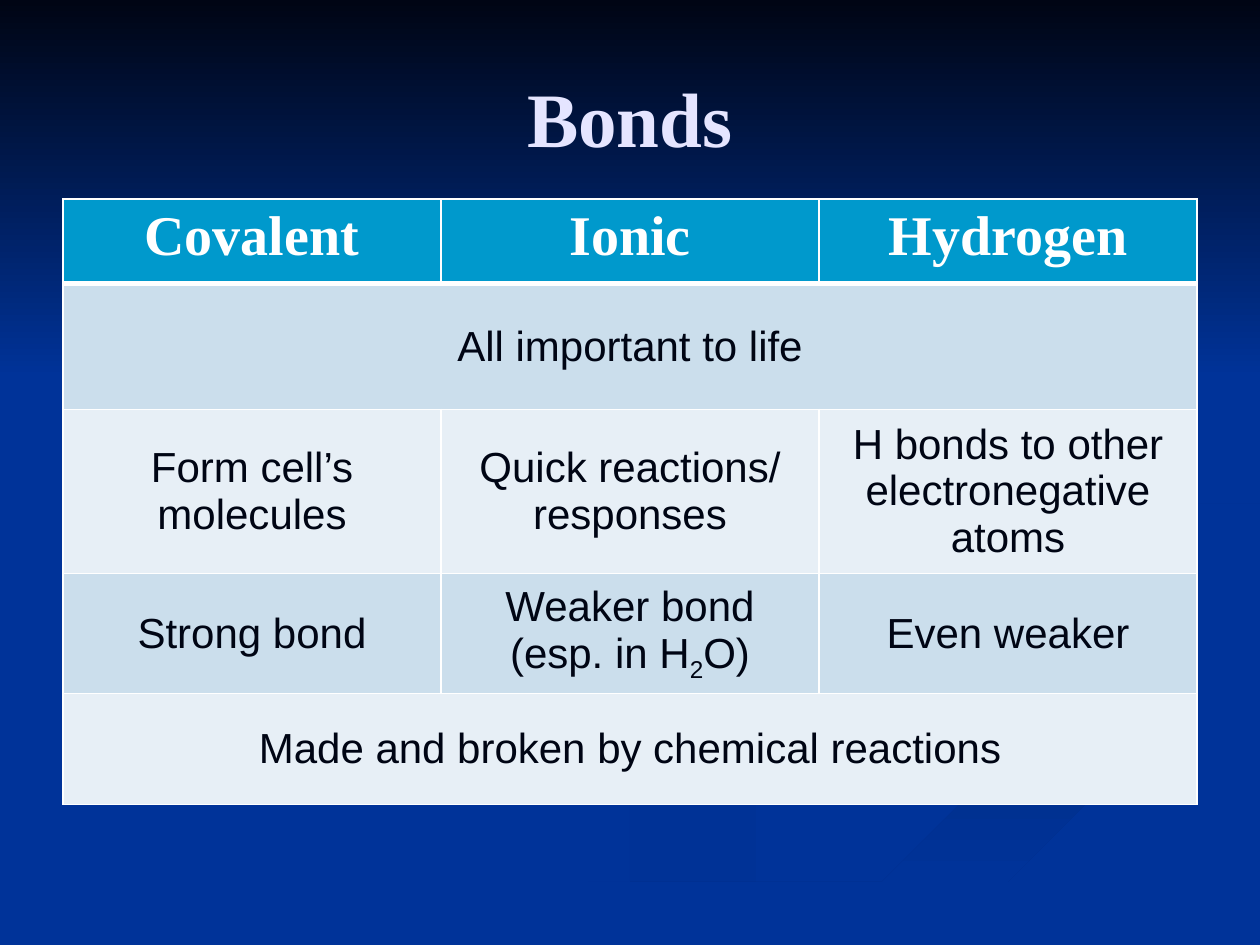
from lxml.etree import SubElement
from pptx import Presentation
from pptx.dml.color import RGBColor
from pptx.enum.text import MSO_ANCHOR, PP_ALIGN
from pptx.oxml.ns import qn
from pptx.util import Inches, Pt

NAVY = "003399"
INK = "000514"
WHITE = "FFFFFF"
HEADER_BLUE = "0099CC"
ROW_FILLS = ("CBDEEC", "E7EFF6")
COLUMN_WIDTH = 3
ROW_HEIGHTS = (0.67, 1, 1.3, 0.9, 0.88)
BONDS = (
    ("Covalent", "Ionic", "Hydrogen"),
    ("All important to life",),
    ("Form cell’s molecules", "Quick reactions/ responses",
     "H bonds to other electronegative atoms"),
    ("Strong bond", "Weaker bond (esp. in H_2_O)", "Even weaker"),
    ("Made and broken by chemical reactions",),
)

LOWER_SWOOSH = (
    (7.81, 5.53), (7.57, 5.43), (7.15, 5.28), (6.61, 5.13), (6.26, 5.02),
    (6.02, 4.9), (5.83, 4.77), (5.74, 4.64), (5.75, 4.59), (5.7, 4.68),
    (5.76, 4.8), (5.93, 4.91), (6.31, 5.05), (6.97, 5.25), (7.41, 5.39),
    (7.7, 5.51), (7.83, 5.59), (7.86, 5.66), (7.8, 5.79), (7.59, 5.9),
    (7.27, 6.02), (6.84, 6.13), (6.16, 6.29), (5.39, 6.49), (4.58, 6.74),
    (3.76, 7.07), (3, 7.49), (3.61, 7.49), (4.31, 7.14), (4.99, 6.87),
    (5.64, 6.65), (6.23, 6.47), (6.99, 6.28), (7.56, 6.14), (7.86, 6.01),
    (7.97, 5.88), (8, 5.81), (7.95, 5.67),
)
RIGHT_SWOOSH = (
    (5.19, 7.47), (5.03, 7.49), (5.71, 7.49), (6, 7.33), (6.49, 7.1),
    (6.95, 6.92), (7.52, 6.72), (8.21, 6.51), (9.03, 6.3), (9.98, 6.09),
    (9.98, 5.81), (9.76, 5.9), (9.36, 6.02), (8.67, 6.2), (7.97, 6.38),
    (7.64, 6.47), (6.96, 6.69), (6.3, 6.93), (5.69, 7.19),
)
UPPER_SWOOSH = (
    (7.81, 4.6), (7.82, 4.69), (7.91, 4.78), (8.06, 4.87), (8.26, 4.96),
    (8.12, 4.87), (8.05, 4.76), (8.09, 4.66), (8.28, 4.53), (8.59, 4.43),
    (8.96, 4.35), (9.54, 4.26), (9.98, 4.2), (9.98, 4.02), (9.67, 4.09),
    (8.98, 4.18), (8.49, 4.27), (8.1, 4.37), (7.91, 4.47),
)
SKY = ((0, 0), (0, 3.08), (10, 3.08), (10, 0))


def paint(fill, color):
    fill.solid()
    fill.fore_color.rgb = RGBColor.from_string(color)


def add_gradient_outline(slide, points, colors, clockwise_angle):
    builder = slide.shapes.build_freeform(*points[0], scale=Inches(1))
    builder.add_line_segments(points[1:], close=True)
    outline = builder.convert_to_shape()
    outline.shadow.inherit = False
    outline.line.fill.background()
    outline.fill.gradient()
    outline.fill.gradient_angle = -clockwise_angle % 360
    for stop, color in zip(outline.fill.gradient_stops, colors):
        stop.color.rgb = RGBColor.from_string(color)


def write(frame, text, size=24, font="Arial", color=INK, bold=False):
    frame.word_wrap = True
    paragraph = frame.paragraphs[0]
    paragraph.alignment = PP_ALIGN.CENTER
    for index, piece in enumerate(text.split("_")):
        run = paragraph.add_run()
        run.text = piece
        run.font.size = Pt(size)
        run.font.name = font
        run.font.bold = bold
        run.font.color.rgb = RGBColor.from_string(color)
        if index % 2:
            run.font._element.set("baseline", "-25000")


def add_title(slide, text):
    title = slide.shapes.add_textbox(Inches(0.5), Inches(0.3), Inches(9), Inches(1.25))
    title.text_frame.vertical_anchor = MSO_ANCHOR.MIDDLE
    write(title.text_frame, text, size=44, font="Times New Roman",
          color="E5E5FF", bold=True)


def set_borders(cell, top=1, bottom=1):
    properties = cell._tc.get_or_add_tcPr()
    for side, width in (("L", 1), ("R", 1), ("T", top), ("B", bottom)):
        border = SubElement(properties, qn(f"a:ln{side}"), w=str(Pt(width)))
        color = SubElement(border, qn("a:solidFill"))
        SubElement(color, qn("a:srgbClr"), val=WHITE)


def add_bond_table(slide):
    columns = len(BONDS[0])
    table = slide.shapes.add_table(
        len(BONDS), columns, Inches(0.5), Inches(1.58),
        Inches(columns * COLUMN_WIDTH), Inches(sum(ROW_HEIGHTS))).table
    for column in table.columns:
        column.width = Inches(COLUMN_WIDTH)
    for index, (entries, height) in enumerate(zip(BONDS, ROW_HEIGHTS)):
        table.rows[index].height = Inches(height)
        is_header = index == 0
        for column in range(columns):
            cell = table.cell(index, column)
            set_borders(cell, top=3 if index == 1 else 1,
                        bottom=3 if is_header else 1)
            paint(cell.fill, HEADER_BLUE if is_header else ROW_FILLS[(index - 1) % 2])
        if len(entries) == 1:
            table.cell(index, 0).merge(table.cell(index, columns - 1))
        for column, entry in enumerate(entries):
            cell = table.cell(index, column)
            if is_header:
                write(cell.text_frame, entry, size=32, font="Times New Roman",
                      color=WHITE, bold=True)
            else:
                cell.vertical_anchor = MSO_ANCHOR.MIDDLE
                write(cell.text_frame, entry)


def main():
    deck = Presentation()
    deck.slide_width = Inches(10)
    deck.slide_height = Inches(7.5)
    slide = deck.slides.add_slide(deck.slide_layouts[6])
    paint(slide.background.fill, NAVY)
    add_gradient_outline(slide, LOWER_SWOOSH, (NAVY, "003193"), 0)
    add_gradient_outline(slide, RIGHT_SWOOSH, ("002F8C", NAVY), 90)
    add_gradient_outline(slide, UPPER_SWOOSH, ("003091", NAVY), 45)
    add_gradient_outline(slide, SKY, (INK, NAVY), 90)
    add_title(slide, "Bonds")
    add_bond_table(slide)
    deck.save("out.pptx")


if __name__ == "__main__":
    main()
